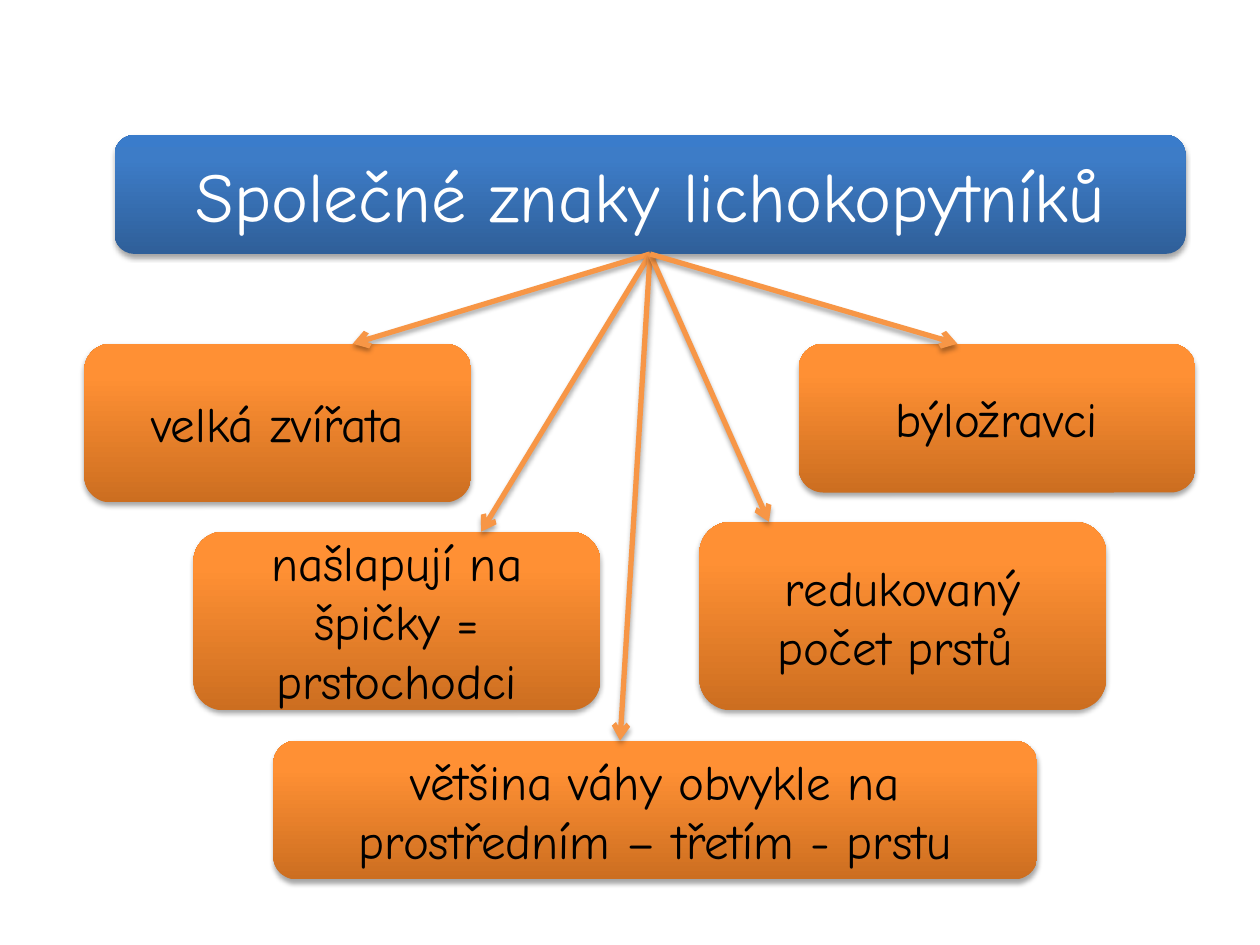
from copy import deepcopy

from lxml import etree
from pptx import Presentation
from pptx.dml.color import RGBColor
from pptx.enum.shapes import MSO_CONNECTOR, MSO_SHAPE
from pptx.enum.text import MSO_ANCHOR, PP_ALIGN
from pptx.oxml.ns import qn
from pptx.util import Cm, Pt

ROUNDED = MSO_SHAPE.ROUNDED_RECTANGLE
STRAIGHT = MSO_CONNECTOR.STRAIGHT
MIDDLE = MSO_ANCHOR.MIDDLE
CENTER = PP_ALIGN.CENTER

FONT = "Comic Neue"
STOP_POSITIONS = (0, 0.8, 1)
BLUE = ("2F5F99", "3D7CC7", "3A7CCB")
ORANGE = ("CC6E20", "FF9034", "FF9136")
ARROW_COLOR = "F79646"
BOTTOM_SIDE = 2

TITLE = ("Společné znaky lichokopytníků", 2.31, 2.72, 21.59, 2.4)

# text, left, top, width, height, x of the arrow tip on the top edge (cm)
TRAITS = [
    ("velká zvířata", 1.7, 6.93, 7.8, 3.2, 7.11),
    ("našlapují na špičky = prstochodci", 3.9, 10.72, 8.2, 3.6, 9.7),
    ("většina váhy obvykle na prostředním – třetím - prstu",
     5.51, 14.93, 15.4, 2.8, 12.5),
    ("redukovaný počet prstů ", 14.1, 10.52, 8.2, 3.8, 15.5),
    ("býložravci", 16.1, 6.93, 8.0, 3.0, 19.3),
]


def rgb(color):
    return RGBColor.from_string(color)


def add_shadow(shape):
    """Add a soft shadow below; the line must already be set."""
    effects = etree.SubElement(shape._element.spPr, qn("a:effectLst"))
    shadow = etree.SubElement(
        effects, qn("a:outerShdw"), blurRad=str(Pt(3.1)), dist=str(Pt(1.8)),
        dir="5400000", rotWithShape="0")
    color = etree.SubElement(shadow, qn("a:srgbClr"), val="000000")
    etree.SubElement(color, qn("a:alpha"), val="35000")


def fill_gradient(shape, colors):
    """Fill from bottom to top with three colours."""
    shape.fill.gradient()
    shape.fill.gradient_angle = 90
    stop_list = shape._element.spPr.find(".//" + qn("a:gsLst"))
    stop_list.append(deepcopy(stop_list[-1]))
    for stop, position, color in zip(shape.fill.gradient_stops,
                                     STOP_POSITIONS, colors):
        stop.position = position
        stop.color.rgb = rgb(color)


def add_box(slide, text, left, top, width, height, colors, size, text_color):
    box = slide.shapes.add_shape(ROUNDED, Cm(left), Cm(top), Cm(width), Cm(height))
    fill_gradient(box, colors)
    box.line.fill.background()
    add_shadow(box)
    frame = box.text_frame
    frame.word_wrap = True
    frame.vertical_anchor = MIDDLE
    frame.text = text
    paragraph = frame.paragraphs[0]
    paragraph.alignment = CENTER
    paragraph.font.name = FONT
    paragraph.font.size = Pt(size)
    paragraph.font.color.rgb = rgb(text_color)
    return box


def add_arrow(slide, source, tip_x, tip_y):
    arrow = slide.shapes.add_connector(STRAIGHT, 0, 0, Cm(tip_x), Cm(tip_y))
    arrow.begin_connect(source, BOTTOM_SIDE)
    arrow.line.color.rgb = rgb(ARROW_COLOR)
    arrow.line.width = Pt(3)
    line = arrow._element.spPr.find(qn("a:ln"))
    etree.SubElement(line, qn("a:tailEnd"), type="arrow")
    add_shadow(arrow)


def main():
    presentation = Presentation()
    presentation.slide_width = Cm(25.4)
    presentation.slide_height = Cm(19.05)
    slide = presentation.slides.add_slide(presentation.slide_layouts[6])

    title = add_box(slide, *TITLE, BLUE, 40, "FFFFFF")
    for *box, _ in TRAITS:
        add_box(slide, *box, ORANGE, 28, "000000")
    for _, _, top, _, _, tip_x in TRAITS:
        add_arrow(slide, title, tip_x, top)

    presentation.save("out.pptx")


if __name__ == "__main__":
    main()
